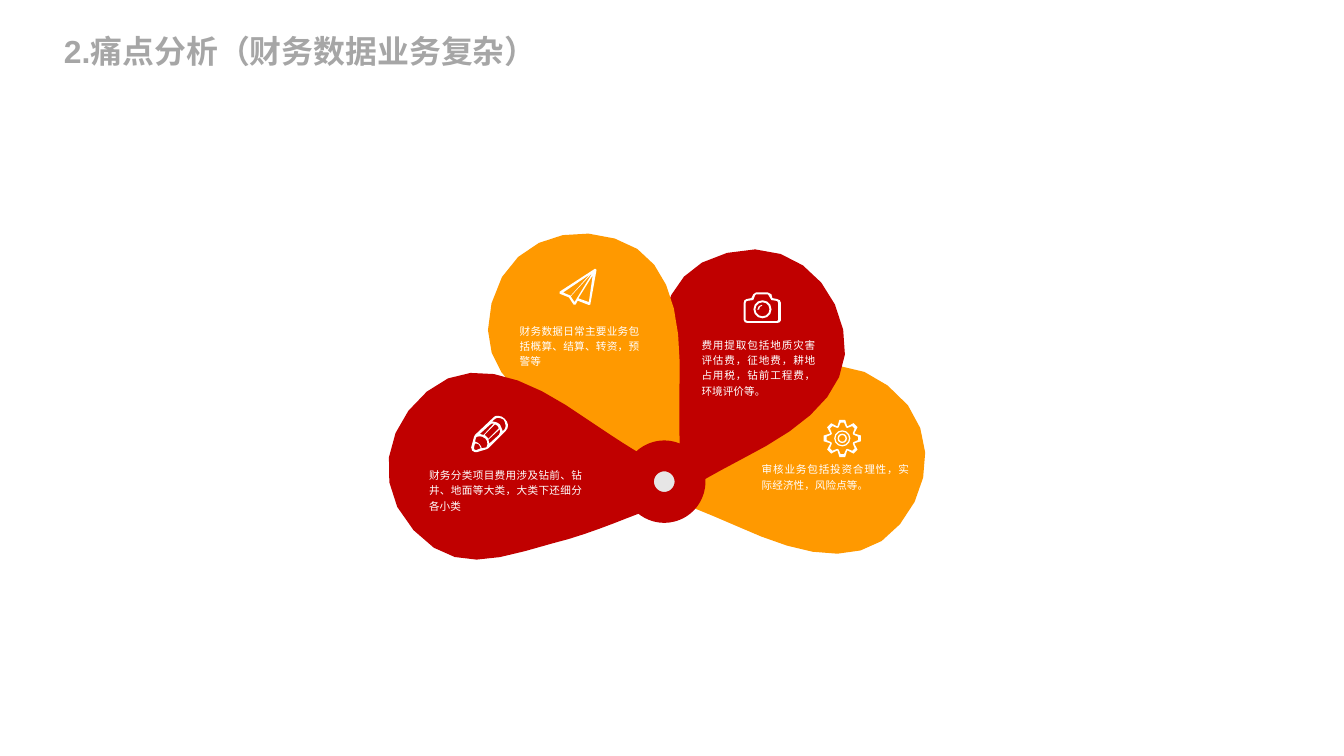
import math
from dataclasses import dataclass

import pptx
import pptx.dml.color
import pptx.enum.shapes
import pptx.enum.text
import pptx.shapes.autoshape
import pptx.util
from pptx.util import Cm

# A node is (x, y) for a straight side, or six numbers for a Bezier curve.
Outline = list[tuple[float, ...]]

COLOURS = {"orange": "FF9900", "red": "C00000", "hub": "E7E6E6", "white": "FFFFFF", "title": "A6A6A6"}
FONT = "Arial"
UNIT = Cm(0.0254)  # one outline unit
FINENESS = 100  # freeform steps per outline unit
MOST_CURVE_STEPS = 6

PETAL: Outline = [
    (80, -119), (121, -79), (111, -50, 102, -18, 86, 15), (61, 72, 46, 115, -17, 118),
    (-80, 122, -120, 72, -120, 15), (-121, -41, -72, -70, -17, -88), (22, -100, 52, -108, 80, -119),
]
PLANE: list[Outline] = [
    [(37.5, 0), (0.5, 24), (0.5, 26.2), (10, 30), (15, 37.5), (17, 37.7),
     (19.3, 33.5), (31, 38), (32.5, 37.5), (39, 1.2)],
    [(31, 35), (20, 31), (35, 7)],
    [(12, 29), (35, 4), (16, 35)],
    [(4, 25), (32, 6), (12, 28.3)],
]
PENCIL: list[Outline] = [
    [(35, 3), (33, 1, 31, 0, 28, 0), (26, 0, 24, 0, 23, 2), (4, 20), (3, 22), (0, 33),
     (0, 36, 2, 38, 4, 38), (6, 38), (16, 35), (18, 34), (36, 16), (40, 12, 39, 7, 35, 3)],
    [(35, 14), (33, 16), (32, 13, 31, 11, 30, 9), (28, 7, 25, 6, 22, 6), (24, 4),
     (25, 3, 27, 2, 28, 2), (30, 2, 32, 3, 34, 4), (35, 6, 36, 8, 36, 10), (36, 11, 36, 13, 35, 14)],
    [(11, 34), (11, 33, 10, 31, 9, 30), (8, 28, 6, 28, 4, 27), (5, 23), (6, 22),
     (8, 21, 12, 21, 15, 24), (17, 26, 18, 30, 16, 33)],
    [(5, 36), (3, 35), (3, 33), (4, 29), (5, 29, 7, 29, 8, 30), (9, 32, 10, 33, 10, 34)],
    [(13, 20), (9, 19), (19, 10), (20, 8, 22, 8, 24, 8)],
    [(18, 24), (17, 23, 16, 21, 14, 20), (25, 9), (26, 9, 29, 11, 29, 13)],
    [(19, 29), (18, 25), (30, 14), (31, 16, 30, 18, 29, 20)],
]
CAMERA: list[Outline] = [
    [(35, 7), (30, 6), (29, 2), (25, 0), (13, 0), (10, 2), (8, 6),
     (3, 7), (1, 7, 0, 9, 0, 11), (0, 29), (0, 31, 2, 32, 4, 32), (35, 32),
     (37, 32, 39, 31, 39, 29), (39, 11), (39, 9, 37, 7, 35, 7)],
    [(36, 29), (35, 30), (4, 30), (2, 29), (2, 11), (3, 9), (10, 8), (12, 3), (13, 2), (25, 2),
     (26, 3), (29, 8), (35, 9), (36, 11)],
]
LENS_GLINT: list[Outline] = [[(5, 0), (3, 0, 0, 2, 0, 5), (2, 5), (2, 3, 3, 1, 5, 1)]]
GEAR_TOOTH_OUTSIDE: Outline = [(-5, -13), (-3, -19.5), (3, -19.5), (5, -13)]
GEAR_TOOTH_INSIDE: Outline = [(-4, -11.5), (-1.8, -16.5), (1.8, -16.5), (4, -11.5)]


@dataclass
class Petal:
    colour: str
    centre: tuple[float, float]
    turn: float


@dataclass
class Icon:
    outlines: list[Outline]
    origin: tuple[float, float]


@dataclass
class Ring:
    centre: tuple[float, float]
    diameter: float
    thickness: float


@dataclass
class Caption:
    box: tuple[float, float, float, float]
    text: str


def gear_outline(tooth: Outline, teeth: int = 8) -> Outline:
    """Repeat one tooth evenly around the centre."""
    outline = []
    for index in range(teeth):
        cos, sin = math.cos(math.tau * index / teeth), math.sin(math.tau * index / teeth)
        outline += [(x * cos - y * sin, x * sin + y * cos) for x, y in tooth]
    return outline


PETALS = [
    Petal("orange", (21.3, 12.28), 219.9),
    Petal("red", (19.47, 9.77), 168.5),
    Petal("orange", (15.79, 9.39), 107.2),
    Petal("red", (13.58, 12.53), 50.5),
]
ICONS = [
    Icon(PLANE, (14.86, 7.14)),
    Icon(PENCIL, (12.52, 11.05)),
    Icon(CAMERA, (19.76, 7.77)),
    Icon(LENS_GLINT, (20.12, 8.1)),
    Icon([gear_outline(GEAR_TOOTH_OUTSIDE), gear_outline(GEAR_TOOTH_INSIDE)], (22.38, 11.65)),
]
RINGS = [
    Ring((20.26, 8.22), 0.48, 0.11),
    Ring((22.38, 11.65), 0.43, 0.08),
    Ring((22.38, 11.65), 0.25, 0.15),
]
CAPTIONS = [
    Caption((11.15, 12.27, 4.57, 1.5), "财务分类项目费用涉及钻前、钻井、地面等大类，大类下还细分各小类"),
    Caption((13.56, 8.43, 3.68, 1.5), "财务数据日常主要业务包括概算、结算、转资，预警等"),
    Caption((18.39, 8.81, 3.53, 1.9), "费用提取包括地质灾害评估费，征地费，耕地占用税，钻前工程费，环境评价等。"),
    Caption((19.99, 12.12, 4.42, 1.07), "审核业务包括投资合理性，实际经济性，风险点等。"),
]


def rgb(name: str) -> pptx.dml.color.RGBColor:
    return pptx.dml.color.RGBColor.from_string(COLOURS[name])


def flatten(outline: Outline) -> list[tuple[float, float]]:
    """Turn an outline with curves into freeform points, more of them on longer curves."""
    points = [outline[0]]
    for node in outline[1:]:
        if len(node) == 2:
            points.append(node)
            continue
        corners = [points[-1], node[0:2], node[2:4], node[4:6]]
        steps = min(MOST_CURVE_STEPS, math.ceil(math.dist(corners[0], corners[3]) / 4))
        for step in range(1, steps + 1):
            t = step / steps
            weights = [math.comb(3, k) * t**k * (1 - t) ** (3 - k) for k in range(4)]
            points.append(tuple(sum(w * c[axis] for w, c in zip(weights, corners)) for axis in (0, 1)))
    return [(x * FINENESS, y * FINENESS) for x, y in points]


def paint(shape: pptx.shapes.autoshape.Shape, colour: str) -> None:
    shape.shadow.inherit = False
    shape.fill.solid()
    shape.fill.fore_color.rgb = rgb(colour)
    shape.line.fill.background()


def draw_outlines(shapes, outlines: list[Outline], origin: tuple[float, float],
                  colour: str) -> pptx.shapes.autoshape.Shape:
    """Draw all outlines as one freeform; inner outlines become holes."""
    contours = [flatten(outline) for outline in outlines]
    builder = shapes.build_freeform(*contours[0][0], scale=UNIT / FINENESS)
    for index, points in enumerate(contours):
        if index:
            builder.move_to(*points[0])
        builder.add_line_segments(points[1:], close=True)
    shape = builder.convert_to_shape(Cm(origin[0]), Cm(origin[1]))
    paint(shape, colour)
    return shape


def draw_round(shapes, kind: pptx.enum.shapes.MSO_SHAPE, centre: tuple[float, float],
               diameter: float, colour: str) -> pptx.shapes.autoshape.Shape:
    left, top = (Cm(value - diameter / 2) for value in centre)
    shape = shapes.add_shape(kind, left, top, Cm(diameter), Cm(diameter))
    paint(shape, colour)
    return shape


def write(para, text: str, size: float, colour: str, bold: bool = False) -> None:
    span = para.add_run()
    span.text = text
    span.font.name = FONT
    span.font.size = pptx.util.Pt(size)
    span.font.bold = bold
    span.font.color.rgb = rgb(colour)


def draw_caption(shapes, caption: Caption) -> None:
    box = shapes.add_textbox(*(Cm(value) for value in caption.box))
    box.text_frame.word_wrap = True
    box.text_frame.auto_size = pptx.enum.text.MSO_AUTO_SIZE.SHAPE_TO_FIT_TEXT
    para = box.text_frame.paragraphs[0]
    para.alignment = pptx.enum.text.PP_ALIGN.JUSTIFY
    para.line_spacing = 1.2
    write(para, caption.text, 8, "white")


def fill_title(title) -> None:
    title.left, title.top, title.width, title.height = Cm(1.7), Cm(0.84), Cm(14.55), Cm(1.02)
    frame = title.text_frame
    frame.margin_left = frame.margin_top = frame.margin_right = frame.margin_bottom = 0
    frame.vertical_anchor = pptx.enum.text.MSO_ANCHOR.MIDDLE
    frame.auto_size = pptx.enum.text.MSO_AUTO_SIZE.NONE
    frame.paragraphs[0].alignment = pptx.enum.text.PP_ALIGN.LEFT
    write(frame.paragraphs[0], "2.痛点分析（财务数据业务复杂）", 24, "title", bold=True)


def main() -> None:
    deck = pptx.Presentation()
    deck.slide_width, deck.slide_height = Cm(35.71), Cm(20.09)
    page = deck.slides.add_slide(deck.slide_layouts[5])
    fill_title(page.shapes.title)
    fan = page.shapes
    for petal in PETALS:
        draw_outlines(fan, [PETAL], petal.centre, petal.colour).rotation = petal.turn
    hub = draw_round(fan, pptx.enum.shapes.MSO_SHAPE.OVAL, (17.65, 12.8), 1.37, "hub")
    hub.line.color.rgb = rgb("red")
    hub.line.width = pptx.util.Pt(23.25)
    for icon in ICONS:
        draw_outlines(fan, icon.outlines, icon.origin, "white")
    for ring in RINGS:
        donut = draw_round(fan, pptx.enum.shapes.MSO_SHAPE.DONUT, ring.centre, ring.diameter, "white")
        donut.adjustments[0] = ring.thickness
    for caption in CAPTIONS:
        draw_caption(fan, caption)
    deck.save("out.pptx")


if __name__ == "__main__":
    main()
